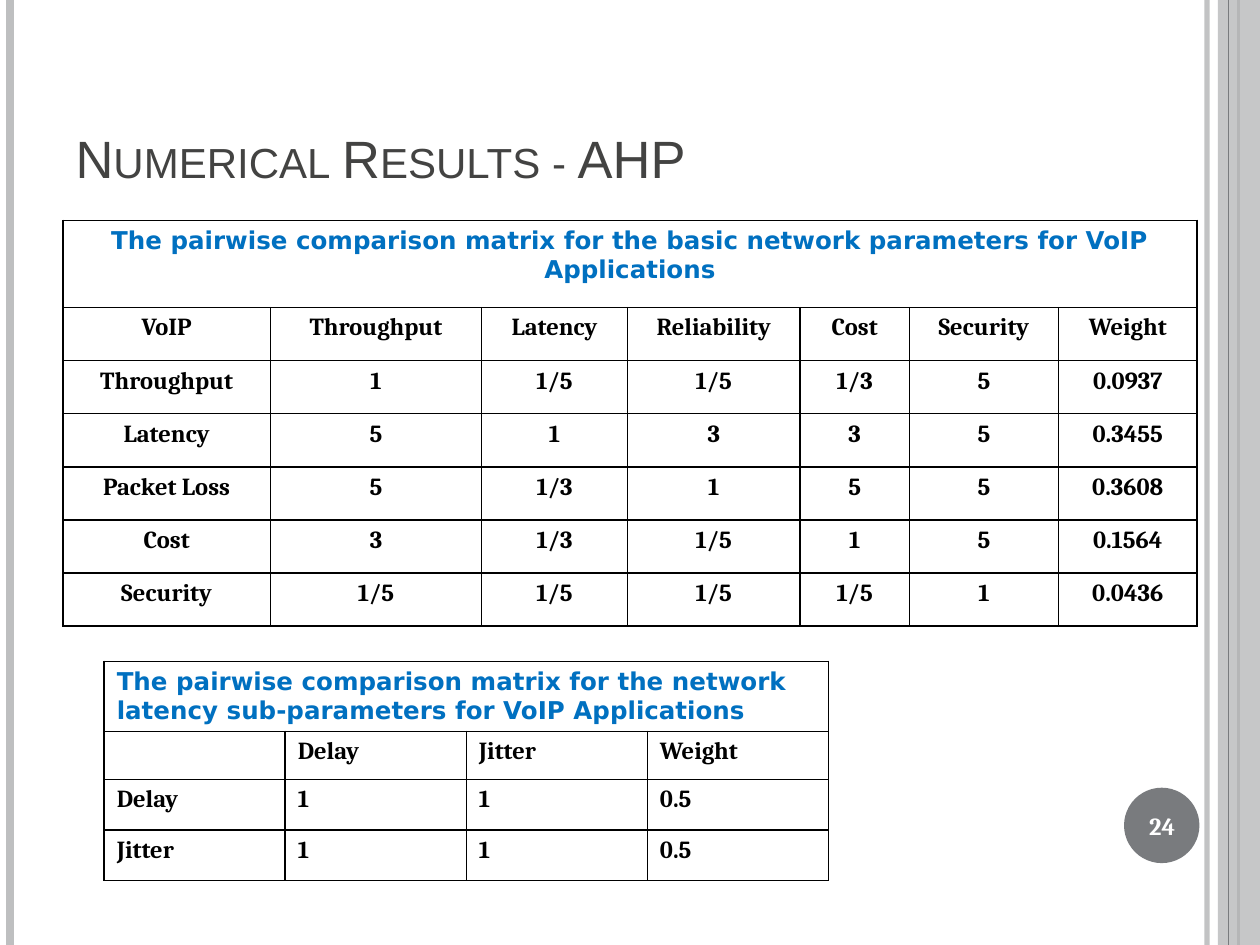
from lxml import etree
from pptx import Presentation
from pptx.dml.color import RGBColor
from pptx.enum.shapes import MSO_CONNECTOR, MSO_SHAPE
from pptx.enum.text import MSO_ANCHOR, PP_ALIGN
from pptx.oxml.ns import qn
from pptx.util import Cm, Pt

STRAIGHT = MSO_CONNECTOR.STRAIGHT
RECTANGLE, OVAL = MSO_SHAPE.RECTANGLE, MSO_SHAPE.OVAL
LEFT, CENTER = PP_ALIGN.LEFT, PP_ALIGN.CENTER
TOP, MIDDLE, BOTTOM = MSO_ANCHOR.TOP, MSO_ANCHOR.MIDDLE, MSO_ANCHOR.BOTTOM

BLACK = RGBColor(0x00, 0x00, 0x00)
WHITE = RGBColor(0xFF, 0xFF, 0xFF)
BLUE = RGBColor(0x00, 0x70, 0xC0)
CHARCOAL = RGBColor(0x43, 0x43, 0x42)
GRAY = RGBColor(0x79, 0x7B, 0x7E)
SILVER = RGBColor(0xBE, 0xBF, 0xC0)

PAGE_WIDTH, PAGE_HEIGHT = 25.4, 19.05


def write_text(frame, text, *, font="Cambria", size=14, color=BLACK, bold=True,
               align=LEFT, small_caps=False):
    """Put one formatted run into the first paragraph of a text frame."""
    para = frame.paragraphs[0]
    para.alignment = align
    span = para.add_run()
    span.text = text
    span.font.name = font
    span.font.size = Pt(size)
    span.font.bold = bold
    span.font.color.rgb = color
    if small_caps:
        span.font._element.set("cap", "small")


def set_alpha(parent, percent):
    """Make the solid colour found inside an XML element partly transparent."""
    color = next(parent.iter(qn("a:srgbClr")))
    etree.SubElement(color, qn("a:alpha"), val=str(percent * 1000))


def set_borders(cell, color=BLACK, width=1):
    properties = cell._tc.get_or_add_tcPr()
    for side in ("a:lnL", "a:lnR", "a:lnT", "a:lnB"):
        line = etree.SubElement(properties, qn(side), w=str(Pt(width)))
        fill = etree.SubElement(line, qn("a:solidFill"))
        etree.SubElement(fill, qn("a:srgbClr"), val=str(color))


class SlideBuilder:
    """Holds the current slide and the style its elements share."""

    caption_style = {"font": "DejaVu Sans", "color": BLUE}

    def __init__(self, page):
        self.page = page

    def title(self, text, left, top, width, height):
        box = self.page.shapes.title
        box.left, box.top, box.width, box.height = map(Cm, (left, top, width, height))
        box.text_frame.vertical_anchor = BOTTOM
        write_text(box.text_frame, text, font="Arial", size=30, color=CHARCOAL,
                   bold=False, small_caps=True)

    def vertical_line(self, x, color, width, alpha=100):
        line = self.page.shapes.add_connector(STRAIGHT, Cm(x), 0, Cm(x), Cm(PAGE_HEIGHT))
        line.line.color.rgb = color
        line.line.width = Pt(width)
        if alpha < 100:
            set_alpha(line._element.spPr, alpha)
        etree.SubElement(line._element.spPr, qn("a:effectLst"))

    def shape(self, kind, left, top, width, height, color, alpha=100):
        shape = self.page.shapes.add_shape(kind, *map(Cm, (left, top, width, height)))
        shape.shadow.inherit = False
        shape.fill.solid()
        shape.fill.fore_color.rgb = color
        shape.line.fill.background()
        if alpha < 100:
            set_alpha(shape._element.spPr, alpha)

    def label(self, text, left, top, width, height, **style):
        box = self.page.shapes.add_textbox(*map(Cm, (left, top, width, height)))
        box.text_frame.word_wrap = True
        box.text_frame.vertical_anchor = MIDDLE
        write_text(box.text_frame, text, align=CENTER, **style)

    def table(self, caption, rows, left, top, widths, heights, align):
        """Bordered grid with a caption across its first row."""
        frame = self.page.shapes.add_table(
            len(heights), len(widths), Cm(left), Cm(top),
            Cm(sum(widths)), Cm(sum(heights)))
        table = frame.table
        table.first_row = table.horz_banding = False
        for column, width in zip(table.columns, widths):
            column.width = Cm(width)
        for row, height in zip(table.rows, heights):
            row.height = Cm(height)
        for cell in table.iter_cells():
            set_borders(cell)
            cell.fill.background()
            cell.vertical_anchor = TOP

        heading = table.cell(0, 0)
        heading.merge(table.cell(0, len(widths) - 1))
        write_text(heading.text_frame, caption, align=align, **self.caption_style)
        for row_index, values in enumerate(rows, start=1):
            for column_index, value in enumerate(values):
                cell = table.cell(row_index, column_index)
                write_text(cell.text_frame, value, align=align)


def main():
    deck = Presentation()
    deck.slide_width, deck.slide_height = Cm(PAGE_WIDTH), Cm(PAGE_HEIGHT)
    page = deck.slides.add_slide(deck.slide_layouts[5])
    builder = SlideBuilder(page)

    # Side bands and page number disc
    builder.vertical_line(24.33, SILVER, 3, alpha=93)
    builder.vertical_line(0.2, SILVER, 4.5)
    builder.vertical_line(24.97, GRAY, 1.5)
    builder.shape(RECTANGLE, 24.55, 0, 0.85, PAGE_HEIGHT, SILVER, alpha=87)
    builder.vertical_line(24.77, GRAY, 0.75)
    builder.shape(OVAL, 22.66, 15.88, 1.52, 1.52, GRAY)

    builder.title("Numerical Results - AHP", 1.27, 0.76, 20.75, 3.18)

    # Basic network parameters
    builder.table(
        "The pairwise comparison matrix for the basic network parameters "
        "for VoIP Applications",
        [
            ("VoIP", "Throughput", "Latency", "Reliability", "Cost", "Security", "Weight"),
            ("Throughput", "1", "1/5", "1/5", "1/3", "5", "0.0937"),
            ("Latency", "5", "1", "3", "3", "5", "0.3455"),
            ("Packet Loss", "5", "1/3", "1", "5", "5", "0.3608"),
            ("Cost", "3", "1/3", "1/5", "1", "5", "0.1564"),
            ("Security", "1/5", "1/5", "1/5", "1/5", "1", "0.0436"),
        ],
        1.27, 4.44,
        widths=[4.18, 4.26, 2.94, 3.48, 2.2, 3.01, 2.79],
        heights=[1.76] + [1.07] * 6,
        align=CENTER)

    # Latency sub-parameters
    builder.table(
        "The pairwise comparison matrix for the network latency "
        "sub-parameters for VoIP Applications",
        [
            ("", "Delay", "Jitter", "Weight"),
            ("Delay", "1", "1", "0.5"),
            ("Jitter", "1", "1", "0.5"),
        ],
        2.1, 13.33,
        widths=[3.65] * 4,
        heights=[1.41, 0.83, 1.02, 1.02],
        align=LEFT)

    builder.label("24", 22.58, 15.93, 1.7, 1.45, color=WHITE)

    deck.save("out.pptx")


if __name__ == "__main__":
    main()
